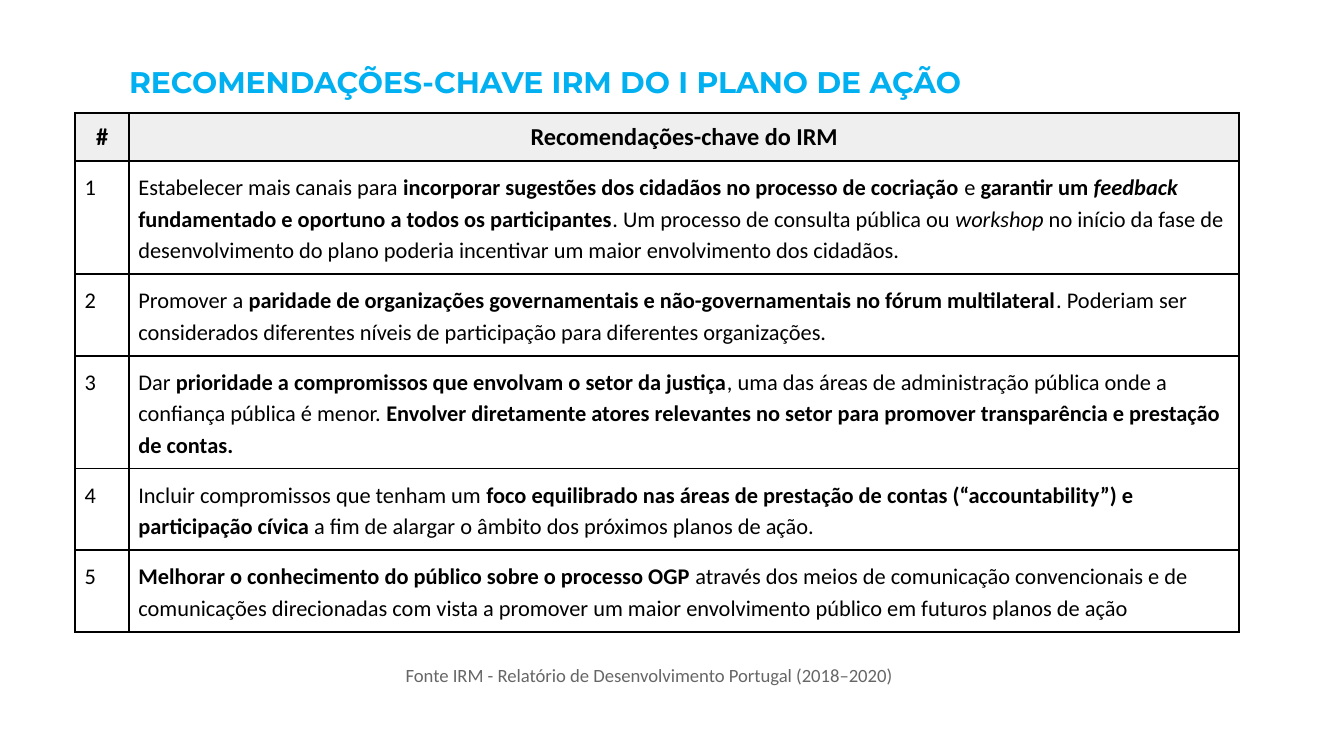
from lxml import etree
from pptx import Presentation
from pptx.dml.color import RGBColor
from pptx.enum.text import MSO_ANCHOR, MSO_AUTO_SIZE, PP_ALIGN
from pptx.oxml.ns import qn
from pptx.util import Inches, Pt

CENTER, LEFT = PP_ALIGN.CENTER, PP_ALIGN.LEFT
TOP, MIDDLE = MSO_ANCHOR.TOP, MSO_ANCHOR.MIDDLE
NO_AUTOFIT = MSO_AUTO_SIZE.NONE
TITLE_ONLY = 5
BLACK, HEADER_FILL, GRAY, BLUE = "000000", "EFEFEF", "666666", "00B0F0"
COLUMN_WIDTHS = (0.4, 8.26)
ROW_HEIGHTS = (0.36, 0.84, 0.6, 0.84, 0.6, 0.6)
CELL_MARGIN = 0.07

HEADERS = ("#", "Recomendações-chave do IRM")
RECOMMENDATIONS = [
    [("Estabelecer mais canais para ", ""),
     ("incorporar sugestões dos cidadãos no processo de cocriação", "b"),
     (" e ", ""),
     ("garantir um ", "b"),
     ("feedback", "bi"),
     (" fundamentado e oportuno a todos os participantes", "b"),
     (". Um processo de consulta pública ou ", ""),
     ("workshop", "i"),
     (" no início da fase de desenvolvimento do plano poderia incentivar "
      "um maior envolvimento dos cidadãos.", "")],
    [("Promover a ", ""),
     ("paridade de organizações governamentais e não-governamentais "
      "no fórum multilateral", "b"),
     (". Poderiam ser considerados diferentes níveis de participação "
      "para diferentes organizações.", "")],
    [("Dar ", ""),
     ("prioridade a compromissos que envolvam o setor da justiça", "b"),
     (", uma das áreas de administração pública onde a confiança pública "
      "é menor. ", ""),
     ("Envolver diretamente atores relevantes no setor para promover "
      "transparência e prestação de contas.", "b")],
    [("Incluir compromissos que tenham um ", ""),
     ("foco equilibrado nas áreas de prestação de contas "
      "(“accountability”) e participação cívica ", "b"),
     ("a fim de alargar o âmbito dos próximos planos de ação.", "")],
    [("Melhorar o conhecimento do público sobre o processo OGP", "b"),
     (" através dos meios de comunicação convencionais e de comunicações "
      "direcionadas com vista a promover um maior envolvimento público "
      "em futuros planos de ação", "")],
]


def color(value):
    """Turn a hex string into a colour."""
    return RGBColor.from_string(value)


def write(paragraph, runs, size, font_name, text_color, align=LEFT, spacing=1.0):
    """Fill a paragraph with (text, style) runs, where style holds b and i."""
    paragraph.alignment = align
    paragraph.line_spacing = spacing
    paragraph.font.size = Pt(size)
    paragraph.font.name = font_name
    paragraph.font.color.rgb = color(text_color)
    for text, style in runs:
        run = paragraph.add_run()
        run.text = text
        run.font.bold = "b" in style
        run.font.italic = "i" in style


def set_frame(frame, horizontal, vertical, anchor):
    """Set wrapping, insets and anchor of a text frame."""
    frame.word_wrap = True
    frame.auto_size = NO_AUTOFIT
    frame.margin_left = frame.margin_right = Inches(horizontal)
    frame.margin_top = frame.margin_bottom = Inches(vertical)
    frame.vertical_anchor = anchor


def set_borders(cell, line_color, width):
    """Draw a solid line on the four sides of a cell."""
    properties = cell._tc.get_or_add_tcPr()
    for index, side in enumerate(("a:lnL", "a:lnR", "a:lnT", "a:lnB")):
        line = etree.Element(qn(side), w=str(Pt(width)))
        fill = etree.SubElement(line, qn("a:solidFill"))
        etree.SubElement(fill, qn("a:srgbClr"), val=line_color)
        properties.insert(index, line)


def add_title(slide, left, top, width, height):
    """Place the slide title."""
    title = slide.shapes.title
    title.left, title.top = Inches(left), Inches(top)
    title.width, title.height = Inches(width), Inches(height)
    set_frame(title.text_frame, 0.1, 0.05, TOP)
    write(title.text_frame.paragraphs[0],
          [("RECOMENDAÇÕES-CHAVE IRM DO I PLANO DE AÇÃO", "b")],
          16, "Montserrat", BLUE, spacing=1.5)


def fill_cell(cell, runs, is_header, align):
    """Write and format one table cell."""
    cell.margin_left = cell.margin_right = Inches(CELL_MARGIN)
    cell.margin_top = cell.margin_bottom = Inches(CELL_MARGIN)
    set_borders(cell, BLACK, 1)
    if is_header:
        cell.fill.solid()
        cell.fill.fore_color.rgb = color(HEADER_FILL)
    else:
        cell.fill.background()
    write(cell.text_frame.paragraphs[0], runs, 13 if is_header else 12,
          "Calibri", BLACK, align, 1.0 if is_header else 1.15)


def add_recommendations(slide, left, top):
    """Place the numbered table of recommendations."""
    table = slide.shapes.add_table(
        len(ROW_HEIGHTS), len(COLUMN_WIDTHS), Inches(left), Inches(top),
        Inches(sum(COLUMN_WIDTHS)), Inches(sum(ROW_HEIGHTS))).table
    table.horz_banding = False
    for column, width in zip(table.columns, COLUMN_WIDTHS):
        column.width = Inches(width)
    for row, height in zip(table.rows, ROW_HEIGHTS):
        row.height = Inches(height)
    for index, header in enumerate(HEADERS):
        fill_cell(table.cell(0, index), [(header, "b")], True, CENTER)
    for number, runs in enumerate(RECOMMENDATIONS, 1):
        fill_cell(table.cell(number, 0), [(str(number), "")], False, LEFT)
        fill_cell(table.cell(number, 1), runs, False, LEFT)


def add_source(slide, left, top, width, height):
    """Place the source line below the table."""
    box = slide.shapes.add_textbox(
        Inches(left), Inches(top), Inches(width), Inches(height))
    set_frame(box.text_frame, 0.1, 0.1, MIDDLE)
    write(box.text_frame.paragraphs[0],
          [("Fonte IRM - Relatório de Desenvolvimento Portugal (2018–2020)", "")],
          10, "Calibri", GRAY)


def main():
    """Build and save the presentation."""
    presentation = Presentation()
    presentation.slide_width = Inches(10)
    presentation.slide_height = presentation.slide_width * 9 // 16
    slide = presentation.slides.add_slide(presentation.slide_layouts[TITLE_ONLY])
    add_recommendations(slide, 0.56, 0.84)
    add_source(slide, 2.92, 4.54, 4.16, 0.97)
    add_title(slide, 0.86, 0.29, 8.08, 0.64)
    presentation.save("out.pptx")


if __name__ == "__main__":
    main()
